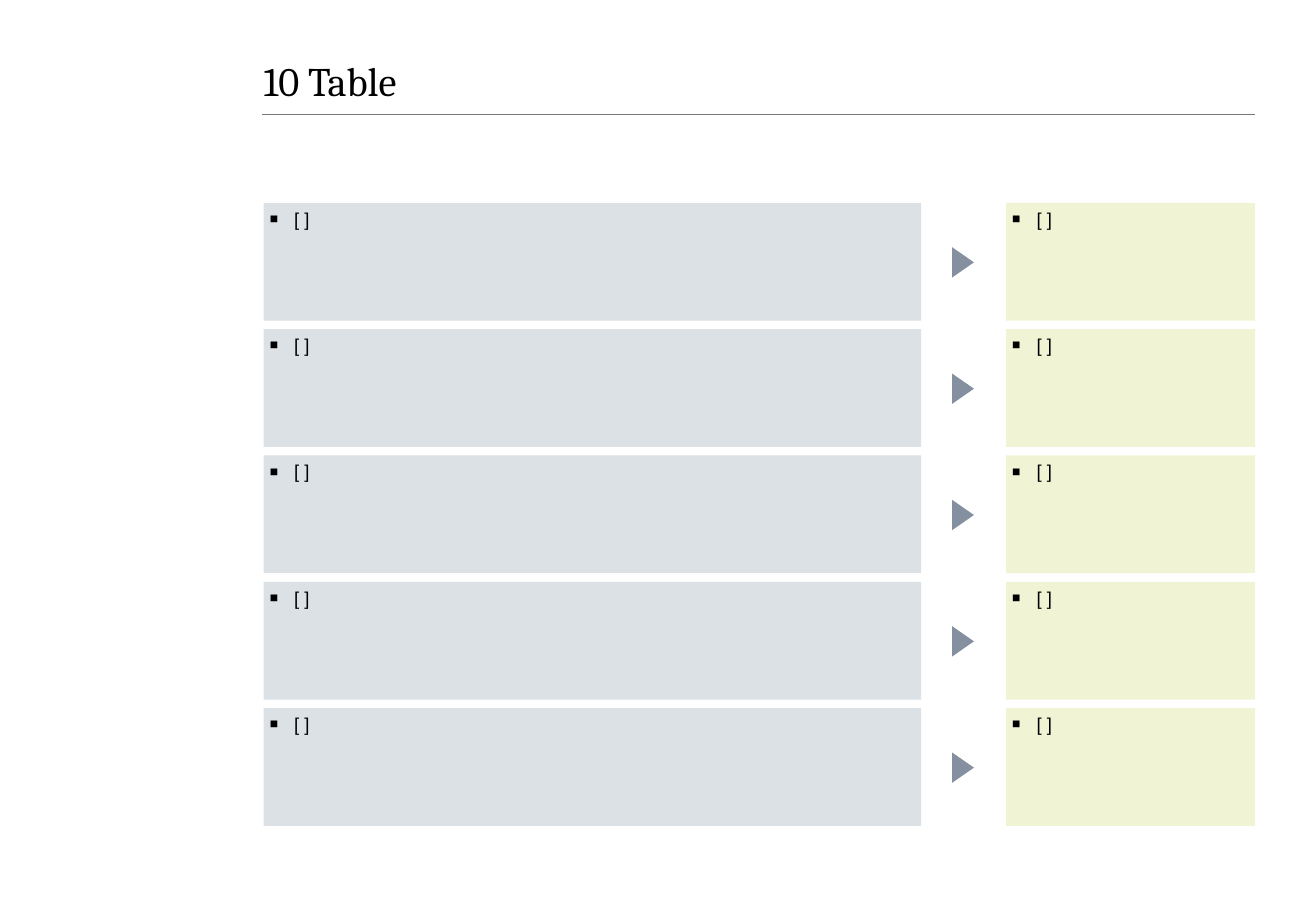
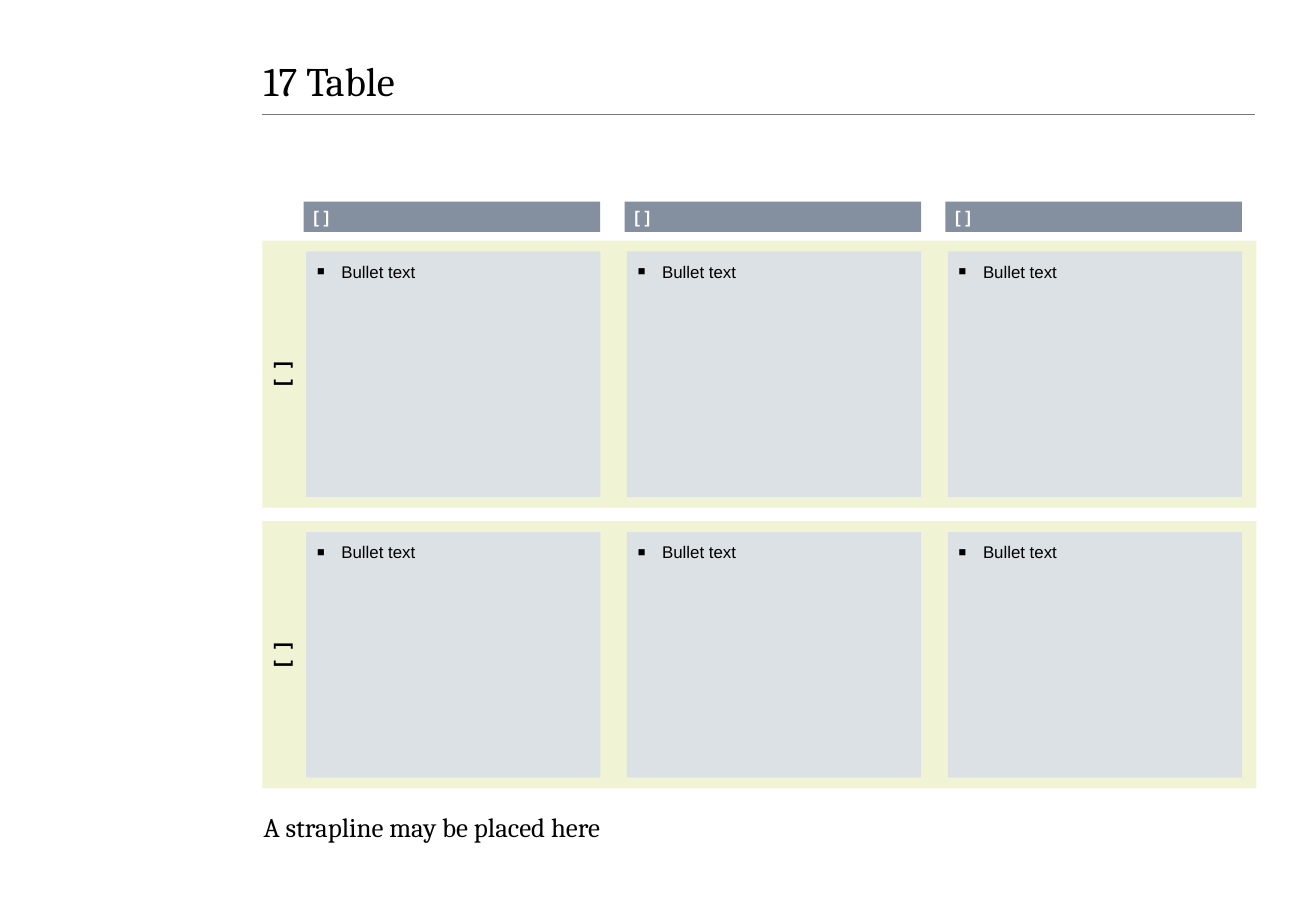
"""Build two table slides: a five-row flow and a two-by-three grid."""
from lxml.etree import SubElement
from pptx import Presentation
from pptx.dml.color import RGBColor
from pptx.enum.shapes import MSO_CONNECTOR as LINE, MSO_SHAPE as SHAPE
from pptx.enum.text import MSO_ANCHOR as ANCHOR, MSO_AUTO_SIZE as FIT, PP_ALIGN as ALIGN
from pptx.oxml.ns import qn
from pptx.util import Emu, Pt

SCALE = 9144


def px(n):
    return Emu(n * SCALE)


def color(code):
    return RGBColor.from_string(code)


def add_bullet(p):
    pPr = p._p.get_or_add_pPr()
    pPr.set("marL", str(px(21)))
    pPr.set("indent", str(px(-20)))
    for tag, name, value in (("a:buSzPct", "val", "75000"),
                             ("a:buFont", "typeface", "Arial"),
                             ("a:buChar", "char", "■")):
        SubElement(pPr, qn(tag)).set(name, value)


def put_text(sp, text, size=11, font="Arial", ink="000000", bold=False, bullet=False,
             align=ALIGN.LEFT, anchor=ANCHOR.TOP, inset=(0, 0, 0, 0), wrap=True,
             fit=FIT.NONE):
    tf = sp.text_frame
    tf.auto_size = fit
    tf.word_wrap = wrap
    tf.vertical_anchor = anchor
    tf.margin_left, tf.margin_top, tf.margin_right, tf.margin_bottom = map(px, inset)
    p = tf.paragraphs[0]
    p.alignment = align
    if bullet:
        add_bullet(p)
    r = p.add_run()
    r.text = text
    r.font.name = font
    r.font.size = Pt(size)
    r.font.bold = bold
    r.font.color.rgb = color(ink)


class Deck:
    SLATE, MIST, LIME, RULE = "848FA0", "DBE1E5", "F0F4D4", "787878"
    HEADING = "Cambria"

    def __init__(self):
        self.prs = Presentation()
        self.prs.slide_width, self.prs.slide_height = px(1083), px(750)
        self.s = None

    def slide(self, title):
        self.s = self.prs.slides.add_slide(self.prs.slide_layouts[5])
        sp = self.s.shapes.title
        sp.left, sp.top, sp.width, sp.height = map(px, (217, 53, 816, 39))
        put_text(sp, title, size=24, font=self.HEADING, anchor=ANCHOR.MIDDLE,
                 inset=(0, 0, 0, 12))
        self.rule(216, 1033, 94)

    def rule(self, x1, x2, y):
        line = self.s.shapes.add_connector(LINE.STRAIGHT, px(x1), px(y), px(x2), px(y))
        line.line.color.rgb = color(self.RULE)
        line.line.width = Pt(0.5)
        SubElement(line._element.spPr, qn("a:effectLst"))

    def shape(self, x, y, w, h, fill, kind=SHAPE.RECTANGLE, turn=0):
        sp = self.s.shapes.add_shape(kind, px(x), px(y), px(w), px(h))
        sp.rotation = turn
        sp.shadow.inherit = False
        sp.fill.solid()
        sp.fill.fore_color.rgb = color(fill)
        sp.line.fill.background()
        return sp

    def card(self, x, y, w, h, text, fill, size, pad):
        put_text(self.shape(x, y, w, h, fill), text, size=size, bullet=True,
                 inset=(pad,) * 4)

    def arrow(self, x, y):
        self.shape(x, y, 25, 18, self.SLATE, SHAPE.ISOSCELES_TRIANGLE, 90)

    def header(self, x, y, w, h, text):
        put_text(self.shape(x, y, w, h, self.SLATE), text, size=10, ink="FFFFFF",
                 bold=True, anchor=ANCHOR.MIDDLE, inset=(8,) * 4)

    def band(self, x, y, w, h, text):
        sp = self.shape(x + (w - h) // 2, y + (h - w) // 2, h, w, self.LIME, turn=270)
        put_text(sp, text, size=12, bold=True, align=ALIGN.CENTER,
                 inset=(10, 5, 10, 5), wrap=False)

    def strapline(self, x, y, w, h, text):
        sp = self.s.shapes.add_textbox(px(x), px(y), px(w), px(h))
        put_text(sp, text, size=16, font=self.HEADING, fit=FIT.SHAPE_TO_FIT_TEXT)


def flow_slide(deck):
    deck.slide("10 Table")
    for row in range(5):
        y = 167 + 104 * row
        deck.arrow(780, y + 40)
        deck.card(217, y, 541, 97, "[ ]", deck.MIST, 11, 4)
        deck.card(828, y, 205, 97, "[ ]", deck.LIME, 11, 4)


def grid_slide(deck):
    deck.slide("17 Table")
    columns = [250 + 264 * col for col in range(3)]
    for x in columns:
        deck.header(x, 166, 244, 25, "[ ]")
    for row in range(2):
        y = 198 + 231 * row
        deck.band(216, y, 818, 220, "[  ]")
        for x in columns:
            deck.card(x + 2, y + 9, 242, 202, "Bullet text", deck.MIST, 10, 8)
    deck.strapline(217, 667, 817, 24, "A strapline may be placed here")


def main():
    deck = Deck()
    flow_slide(deck)
    grid_slide(deck)
    deck.prs.save("out.pptx")


if __name__ == "__main__":
    main()
